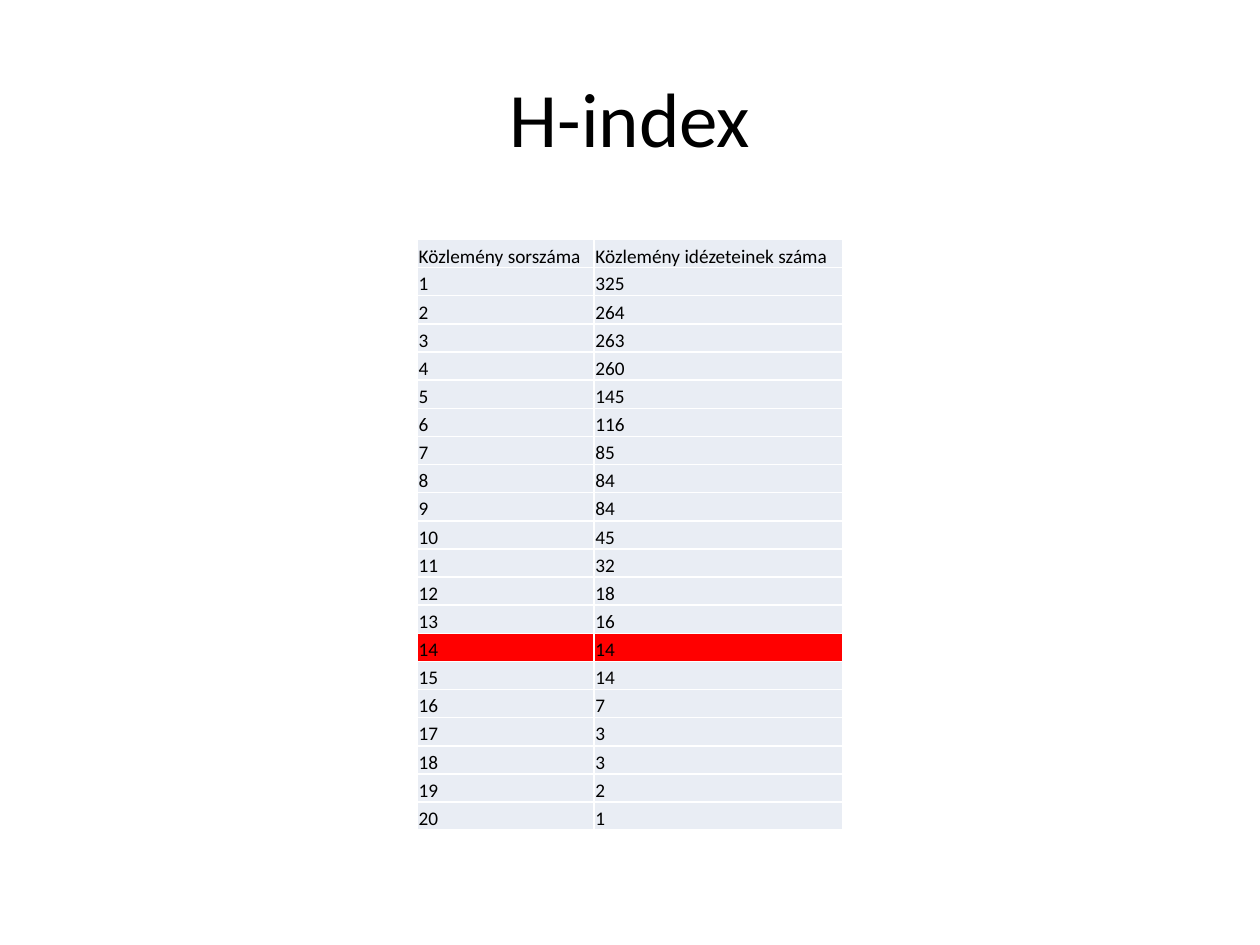
import pptx
import pptx.dml.color
import pptx.enum.text
import pptx.oxml
import pptx.oxml.ns
import pptx.util

Pt = pptx.util.Pt
Anchor = pptx.enum.text.MSO_ANCHOR

FONT = "Calibri"
BLACK, WHITE, PALE, RED = "000000", "FFFFFF", "E9EDF4", "FF0000"
HEADINGS = ("Közlemény sorszáma", "Közlemény idézeteinek száma")
CITATIONS = (325, 264, 263, 260, 145, 116, 85, 84, 84, 45,
             32, 18, 16, 14, 14, 7, 3, 3, 2, 1)
COLUMN_WIDTHS = (101, 142)
HEADER_HEIGHT, ROW_HEIGHT = 13, 16.1


def color(value):
    return pptx.dml.color.RGBColor.from_string(value)


def set_font(para, size):
    para.font.name = FONT
    para.font.size = Pt(size)
    para.font.color.rgb = color(BLACK)


def add_title(page, text):
    box = page.shapes.add_textbox(Pt(36), Pt(21.6), Pt(648), Pt(90))
    frame = box.text_frame
    frame.word_wrap = True
    frame.vertical_anchor = Anchor.MIDDLE
    para = frame.paragraphs[0]
    para.text = text
    para.alignment = pptx.enum.text.PP_ALIGN.CENTER
    set_font(para, 44)


def add_borders(cell, line_color, width):
    properties = cell._tc.get_or_add_tcPr()
    for side in ("lnL", "lnR", "lnT", "lnB"):
        properties.append(pptx.oxml.parse_xml(
            f'<a:{side} {pptx.oxml.ns.nsdecls("a")} w="{Pt(width)}"><a:solidFill>'
            f'<a:srgbClr val="{line_color}"/></a:solidFill></a:{side}>'))


def fill_cell(cell, text, fill, anchor):
    add_borders(cell, WHITE, 1)
    cell.fill.solid()
    cell.fill.fore_color.rgb = color(fill)
    cell.margin_left = cell.margin_right = cell.margin_top = Pt(0.75)
    cell.margin_bottom = 0
    cell.vertical_anchor = anchor
    para = cell.text_frame.paragraphs[0]
    para.text = str(text)
    para.line_spacing = 1.15
    para.space_after = Pt(10)
    set_font(para, 11)


def h_index(citations):
    return sum(count >= rank for rank, count in enumerate(citations, 1))


def add_citation_table(page):
    """Rank the papers by citations and mark the row that gives the h-index."""
    rows = [HEADINGS, *enumerate(CITATIONS, 1)]
    frame = page.shapes.add_table(
        len(rows), len(HEADINGS), Pt(238.5), Pt(137), Pt(sum(COLUMN_WIDTHS)),
        Pt(HEADER_HEIGHT + ROW_HEIGHT * len(CITATIONS)))
    table = frame.table
    for column, width in zip(table.columns, COLUMN_WIDTHS):
        column.width = Pt(width)
    marked = h_index(CITATIONS)
    for index, values in enumerate(rows):
        table.rows[index].height = Pt(ROW_HEIGHT if index else HEADER_HEIGHT)
        fill = RED if index == marked else PALE
        anchor = Anchor.MIDDLE if index else Anchor.BOTTOM
        for cell, value in zip(table.rows[index].cells, values):
            fill_cell(cell, value, fill, anchor)


def main():
    deck = pptx.Presentation()
    deck.slide_width, deck.slide_height = Pt(720), Pt(540)
    page = deck.slides.add_slide(deck.slide_layouts[6])
    add_title(page, "H-index")
    add_citation_table(page)
    deck.save("out.pptx")


if __name__ == "__main__":
    main()
